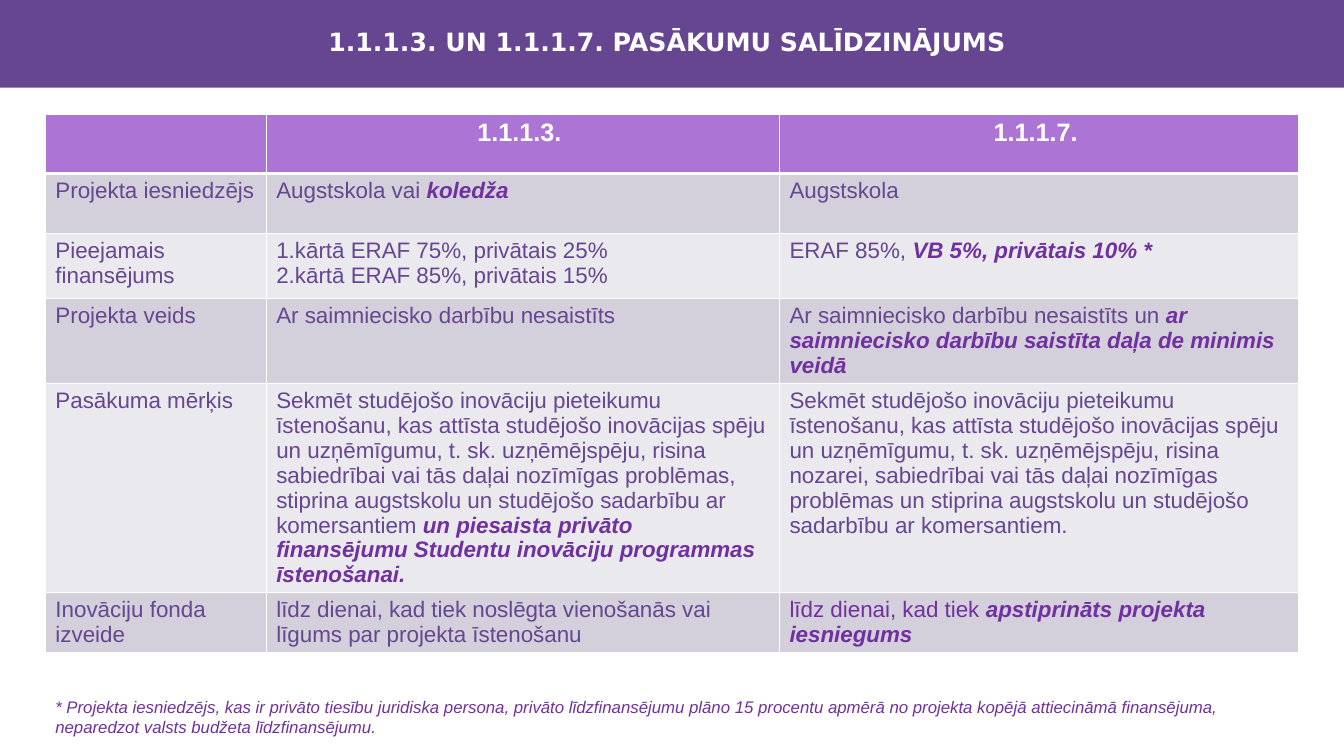
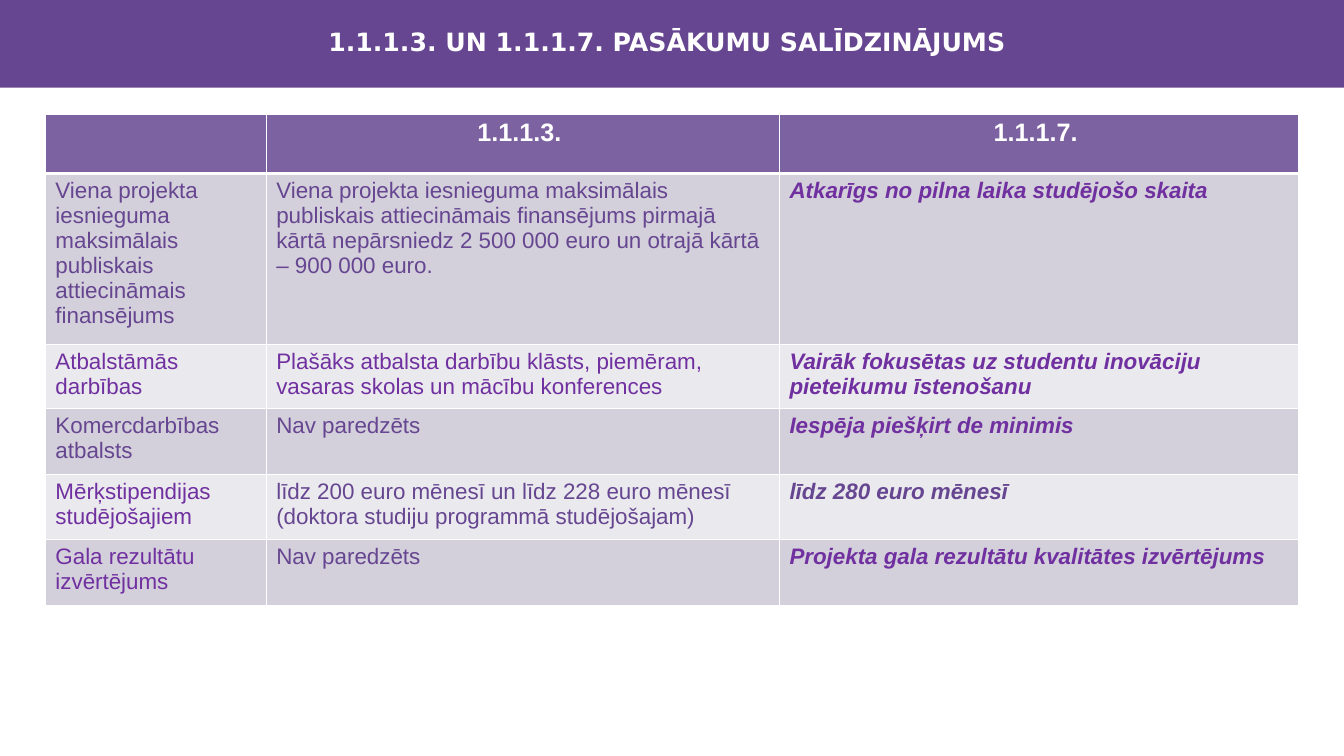
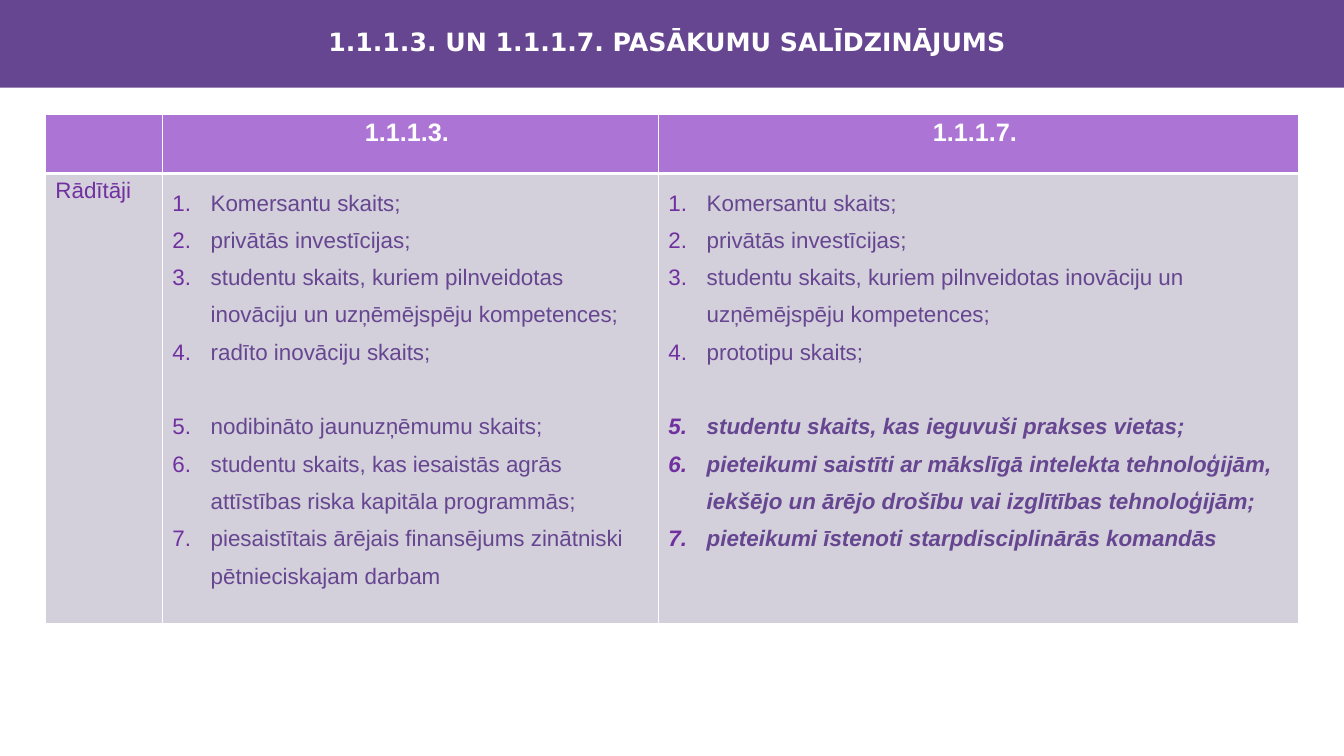
"""Build three slides that compare measures 1.1.1.3. and 1.1.1.7."""
from dataclasses import dataclass

from lxml import etree
from pptx import Presentation
from pptx import util as u
from pptx.dml import color
from pptx.enum import shapes, text
from pptx.oxml import ns


@dataclass(frozen=True)
class Theme:
    band: str = "664690"
    body: str = "664690"
    accent: str = "7030A0"
    bright_header: str = "AC75D5"
    muted_header: str = "7C62A0"
    stripes: tuple = ("D3CFDB", "EAE9EE")
    white: str = "FFFFFF"
    title_font: str = "DejaVu Sans"
    font: str = "Arial"
    title_size: int = 18
    header_size: int = 18
    body_size: int = 16
    note_size: int = 12
    list_indent: float = 0.38
    list_spacing: float = 1.5
    list_gap: float = 26.7
    border: int = 1
    header_border: int = 3


@dataclass(frozen=True)
class Run:
    words: str
    color: str
    size: int
    bold: bool = False
    italic: bool = False
    font: str = Theme.font


@dataclass(frozen=True)
class Paragraph:
    runs: tuple
    numbered: bool = False
    gap: float = 0


THEME = Theme()
WIDTH, HEIGHT = u.Inches(13.33), u.Inches(7.5)
MARGIN, TABLE_TOP, TABLE_WIDTH = 3.38, 15.07, 93.25
BAND_ROW, HEADER_ROW = 11.6, 7.87
TITLE = "1.1.1.3. UN 1.1.1.7. PASĀKUMU SALĪDZINĀJUMS"
HEADERS = ("", "1.1.1.3. ", "1.1.1.7. ")
WIDE_COLUMNS = (17.62, 40.95, 41.43)
LIST_COLUMNS = (9.33, 39.58, 51.09)


def across(percent):
    return u.Emu(round(WIDTH * percent / 100))


def down(percent):
    return u.Emu(round(HEIGHT * percent / 100))


def rgb(value):
    return color.RGBColor.from_string(value)


def plain(words):
    return Run(words, THEME.body, THEME.body_size)


def accent(words):
    return Run(words, THEME.accent, THEME.body_size)


def strong(words, tint=THEME.accent):
    return Run(words, tint, THEME.body_size, bold=True, italic=True)


def strong_body(words):
    return strong(words, THEME.body)


def cell_of(*runs):
    return [Paragraph(runs)]


def numbered(first, second, second_style=plain):
    """Return two groups of one numbered list, parted by a gap."""
    groups = [Paragraph((plain(words),), True) for words in first]
    for index, words in enumerate(second):
        gap = 0 if index else THEME.list_gap
        groups.append(Paragraph((second_style(words),), True, gap))
    return groups


def add_run(paragraph, run):
    piece = paragraph.add_run()
    piece.text = run.words
    font = piece.font
    font.name, font.size = run.font, u.Pt(run.size)
    font.bold, font.italic = run.bold, run.italic
    font.color.rgb = rgb(run.color)


def add_color(parent, tag, value):
    holder = etree.SubElement(parent, ns.qn(tag))
    etree.SubElement(holder, ns.qn("a:srgbClr"), val=value)


def number_paragraph(paragraph, gap):
    """Turn a paragraph into an automatically numbered item."""
    paragraph.line_spacing = THEME.list_spacing
    if gap:
        paragraph.space_before = u.Pt(gap)
    properties = paragraph._p.get_or_add_pPr()
    indent = u.Inches(THEME.list_indent)
    properties.set("marL", str(indent))
    properties.set("indent", str(-indent))
    add_color(properties, "a:buClr", THEME.accent)
    etree.SubElement(properties, ns.qn("a:buFont"), typeface="+mj-lt")
    etree.SubElement(properties, ns.qn("a:buAutoNum"), type="arabicPeriod")


def write(frame, paragraphs, align=text.PP_ALIGN.LEFT):
    for index, content in enumerate(paragraphs):
        paragraph = frame.add_paragraph() if index else frame.paragraphs[0]
        paragraph.alignment = align
        for run in content.runs:
            add_run(paragraph, run)
        if content.numbered:
            number_paragraph(paragraph, content.gap)


def paint_cell(cell, fill, bottom):
    """Give a cell white borders and a solid fill."""
    properties = cell._tc.get_or_add_tcPr()
    for side in "LRTB":
        points = bottom if side == "B" else THEME.border
        line = etree.SubElement(properties, ns.qn(f"a:ln{side}"), w=str(u.Pt(points)))
        add_color(line, "a:solidFill", THEME.white)
    cell.fill.solid()
    cell.fill.fore_color.rgb = rgb(fill)


def add_title_band(slide):
    band = slide.shapes.add_shape(shapes.MSO_SHAPE.RECTANGLE, 0, 0, WIDTH, down(BAND_ROW))
    band.shadow.inherit = False
    band.fill.solid()
    band.fill.fore_color.rgb = rgb(THEME.band)
    band.line.fill.background()
    frame = band.text_frame
    frame.word_wrap = True
    frame.margin_left = 0
    frame.vertical_anchor = text.MSO_ANCHOR.MIDDLE
    title = Run(TITLE, THEME.white, THEME.title_size, bold=True, font=THEME.title_font)
    write(frame, cell_of(title), text.PP_ALIGN.CENTER)
    frame.paragraphs[0].line_spacing = 0.9


def add_comparison(slide, columns, header_fill, rows):
    """Add the table; each row is its height and its cells."""
    heights = [HEADER_ROW] + [height for height, *_ in rows]
    table = slide.shapes.add_table(
        len(heights), len(columns), across(MARGIN), down(TABLE_TOP),
        across(TABLE_WIDTH), down(sum(heights))).table
    table.horz_banding = False
    for column, share in zip(table.columns, columns):
        column.width = across(TABLE_WIDTH * share / 100)
    for row, height in zip(table.rows, heights):
        row.height = down(height)
    for cell, words in zip(table.rows[0].cells, HEADERS):
        paint_cell(cell, header_fill, THEME.header_border)
        if words:
            header = Run(words, THEME.white, THEME.header_size, bold=True)
            write(cell.text_frame, cell_of(header), text.PP_ALIGN.CENTER)
    for index, (_, *contents) in enumerate(rows):
        for cell, content in zip(table.rows[index + 1].cells, contents):
            paint_cell(cell, THEME.stripes[index % 2], THEME.border)
            write(cell.text_frame, content)


def add_footnote(slide, words):
    box = slide.shapes.add_textbox(across(MARGIN), down(91.47), across(89.72), down(6.67))
    frame = box.text_frame
    frame.word_wrap = True
    frame.auto_size = text.MSO_AUTO_SIZE.SHAPE_TO_FIT_TEXT
    write(frame, cell_of(Run(words, THEME.accent, THEME.note_size, italic=True)))


def add_slide(presentation):
    slide = presentation.slides.add_slide(presentation.slide_layouts[6])
    add_title_band(slide)
    return slide


def build_conditions(presentation):
    slide = add_slide(presentation)
    add_comparison(slide, WIDE_COLUMNS, THEME.bright_header, [
        (7.9, cell_of(plain("Projekta iesniedzējs")),
         cell_of(plain("Augstskola vai "), strong("koledža")),
         cell_of(plain("Augstskola"))),
        (8.67, cell_of(plain("Pieejamais finansējums")),
         cell_of(plain("1.kārtā ERAF 75%, privātais 25%"))
         + cell_of(plain("2.kārtā ERAF 85%, privātais 15%")),
         cell_of(plain("ERAF 85%, "), strong("VB 5%, privātais 10% *"))),
        (11.1, cell_of(plain("Projekta veids")),
         cell_of(plain("Ar saimniecisko darbību nesaistīts")),
         cell_of(plain("Ar saimniecisko darbību nesaistīts un "),
                 strong("ar saimniecisko darbību saistīta daļa de minimis veidā"))),
        (27.6, cell_of(plain("Pasākuma mērķis")),
         cell_of(plain("Sekmēt studējošo inovāciju pieteikumu īstenošanu, kas attīsta "
                       "studējošo inovācijas spēju un uzņēmīgumu, t. sk. uzņēmējspēju, "
                       "risina sabiedrībai vai tās daļai nozīmīgas problēmas, stiprina "
                       "augstskolu un studējošo sadarbību ar komersantiem "),
                 strong("un piesaista privāto finansējumu Studentu inovāciju programmas "
                        "īstenošanai.")),
         cell_of(plain("Sekmēt studējošo inovāciju pieteikumu īstenošanu, kas attīsta "
                       "studējošo inovācijas spēju un uzņēmīgumu, t. sk. uzņēmējspēju, "
                       "risina nozarei, sabiedrībai vai tās daļai nozīmīgas problēmas un "
                       "stiprina augstskolu un studējošo sadarbību ar komersantiem."))),
        (7.9, cell_of(plain("Inovāciju fonda izveide")),
         cell_of(plain("līdz dienai, kad tiek noslēgta vienošanās vai līgums par "
                       "projekta īstenošanu")),
         cell_of(accent("līdz dienai, kad tiek "),
                 strong("apstiprināts projekta iesniegums"))),
    ])
    add_footnote(slide, "* Projekta iesniedzējs, kas ir privāto tiesību juridiska persona, "
                 "privāto līdzfinansējumu plāno 15 procentu apmērā no projekta kopējā "
                 "attiecināmā finansējuma, neparedzot valsts budžeta līdzfinansējumu.")


def build_support(presentation):
    slide = add_slide(presentation)
    add_comparison(slide, WIDE_COLUMNS, THEME.muted_header, [
        (21, cell_of(plain("Viena projekta iesnieguma maksimālais publiskais "
                           "attiecināmais finansējums")),
         cell_of(plain("Viena projekta iesnieguma maksimālais publiskais attiecināmais "
                       "finansējums pirmajā kārtā nepārsniedz 2 500 000 euro un otrajā "
                       "kārtā – 900 000 euro.")),
         cell_of(strong("Atkarīgs no pilna laika studējošo skaita"))),
        (7.9, cell_of(accent("Atbalstāmās darbības")),
         cell_of(accent("Plašāks atbalsta darbību klāsts, piemēram, vasaras skolas un "
                        "mācību konferences")),
         cell_of(strong("Vairāk fokusētas uz studentu inovāciju pieteikumu īstenošanu"))),
        (8.67, cell_of(plain("Komercdarbības atbalsts")),
         cell_of(plain("Nav paredzēts")),
         cell_of(strong("Iespēja piešķirt de minimis"))),
        (8.67, cell_of(accent("Mērķstipendijas studējošajiem")),
         cell_of(plain("līdz 200 euro mēnesī un līdz 228 euro mēnesī (doktora studiju "
                       "programmā studējošajam)")),
         cell_of(strong_body("līdz 280 euro mēnesī"))),
        (8.67, cell_of(accent("Gala rezultātu izvērtējums")),
         cell_of(plain("Nav paredzēts")),
         cell_of(strong("Projekta gala rezultātu kvalitātes izvērtējums"))),
    ])


def build_indicators(presentation):
    slide = add_slide(presentation)
    shared = ("Komersantu skaits;", "privātās investīcijas;",
              "studentu skaits, kuriem pilnveidotas inovāciju un uzņēmējspēju kompetences;")
    add_comparison(slide, LIST_COLUMNS, THEME.bright_header, [
        (55.4, cell_of(accent("Rādītāji")),
         numbered((*shared, "radīto inovāciju skaits;"),
                  ("nodibināto jaunuzņēmumu skaits;",
                   "studentu skaits, kas iesaistās agrās attīstības riska kapitāla "
                   "programmās;",
                   "piesaistītais ārējais finansējums zinātniski pētnieciskajam darbam")),
         numbered((*shared, "prototipu skaits;"),
                  ("studentu skaits, kas ieguvuši prakses vietas;",
                   "pieteikumi saistīti ar mākslīgā intelekta tehnoloģijām, iekšējo un "
                   "ārējo drošību vai izglītības tehnoloģijām;",
                   "pieteikumi īstenoti starpdisciplinārās komandās"),
                  strong_body)),
    ])


def main():
    presentation = Presentation()
    presentation.slide_width, presentation.slide_height = WIDTH, HEIGHT
    build_conditions(presentation)
    build_support(presentation)
    build_indicators(presentation)
    presentation.save("out.pptx")


if __name__ == "__main__":
    main()
